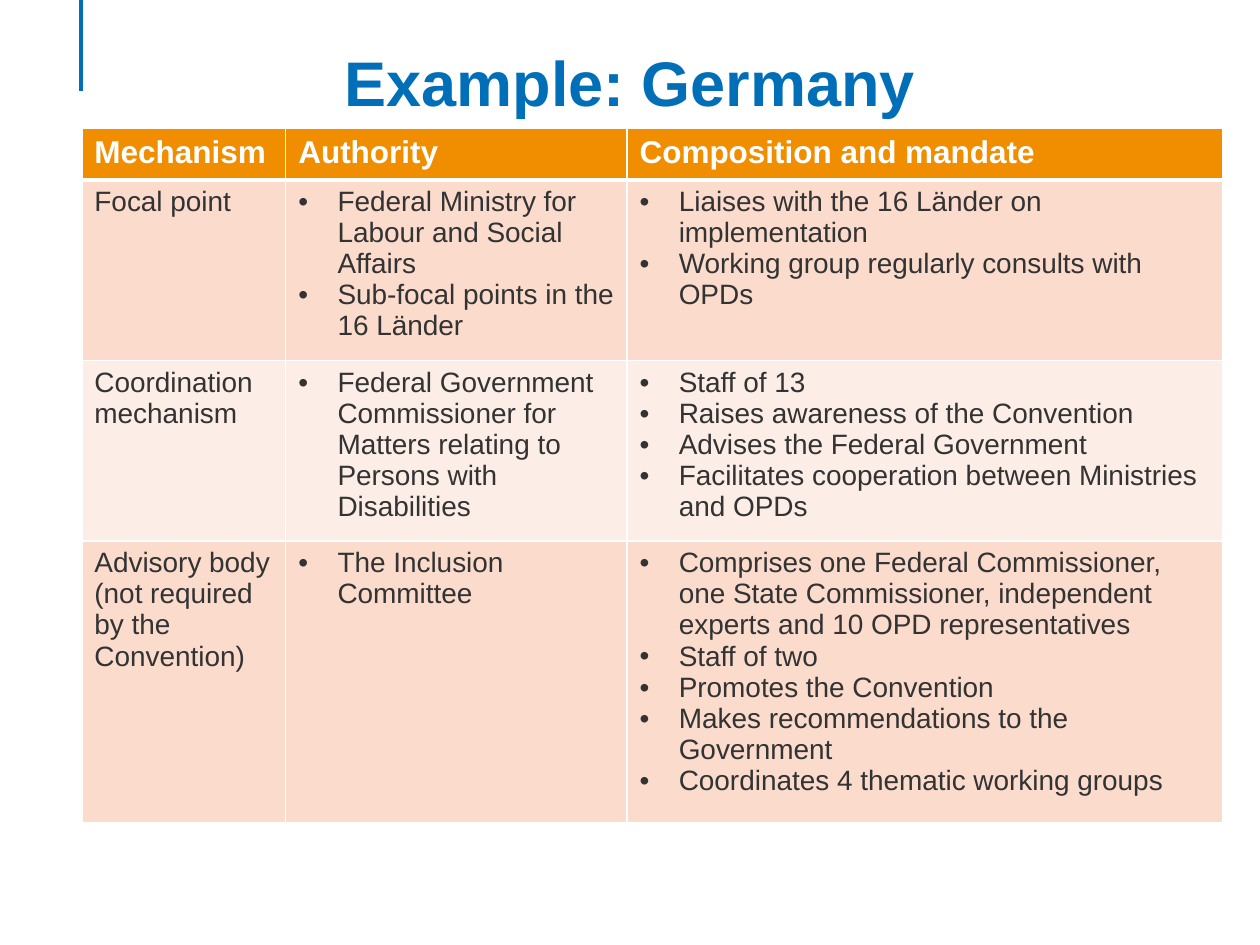
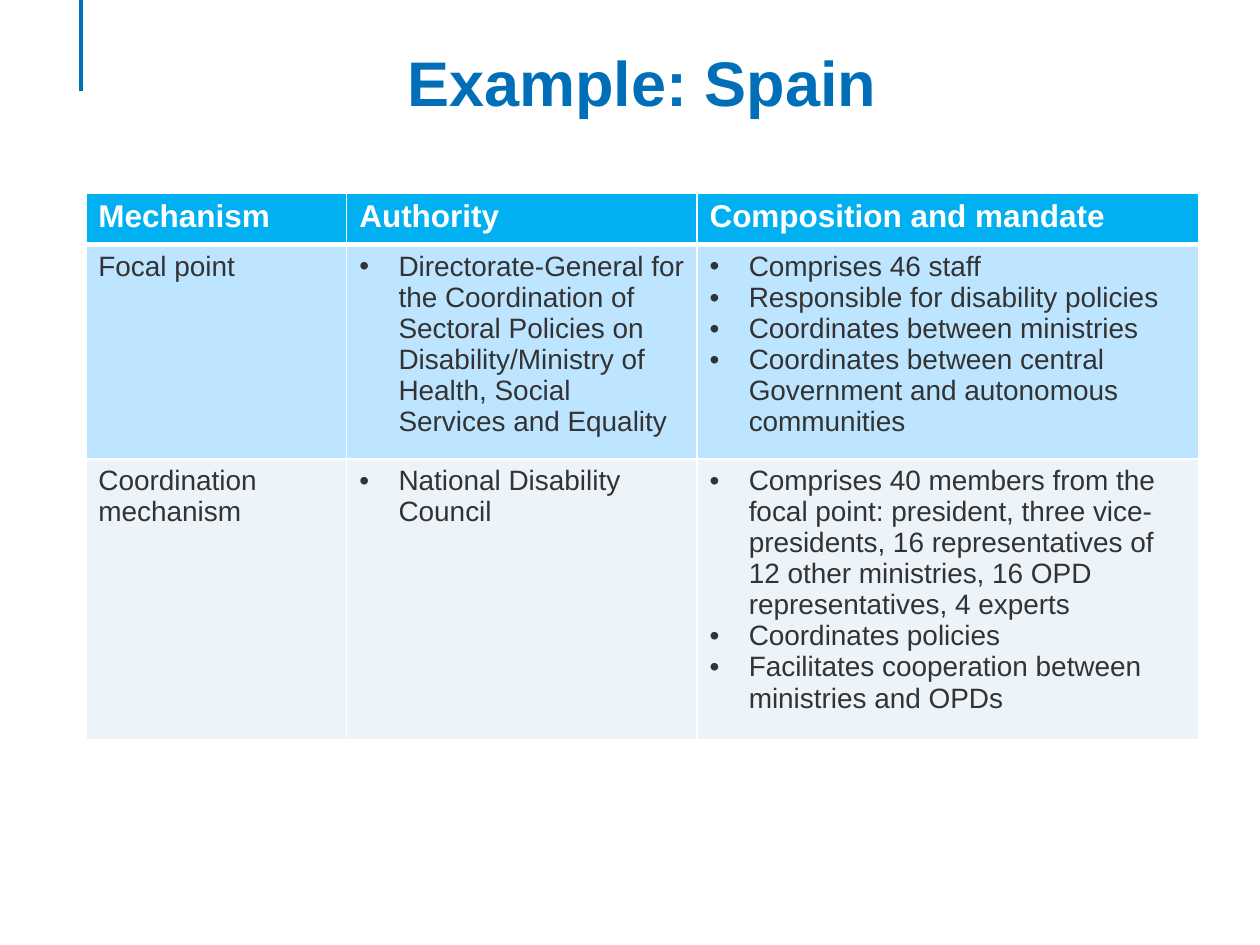
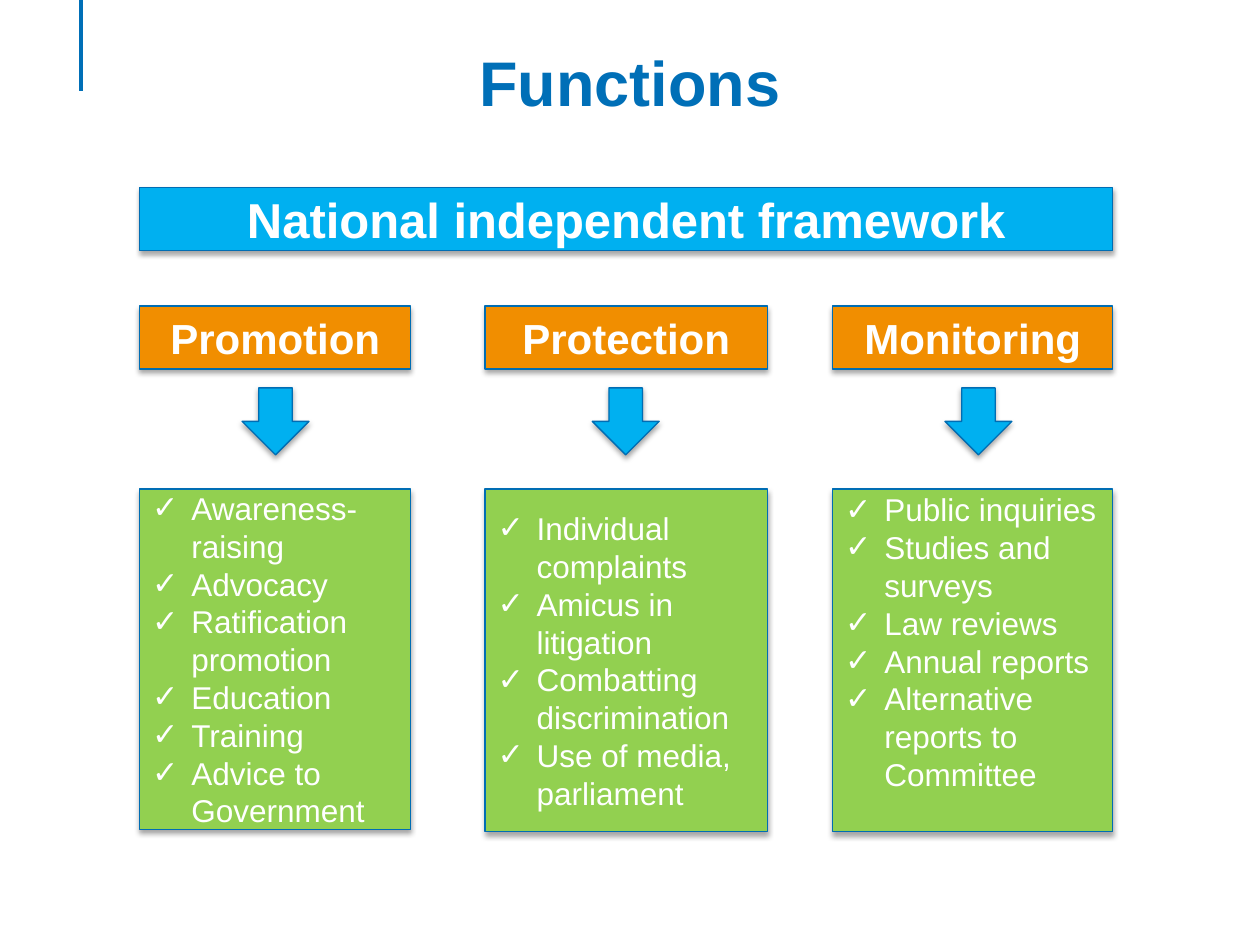
from lxml import etree
from pptx import Presentation
from pptx import util as u
from pptx.dml import color as col
from pptx.enum import shapes, text
from pptx.oxml import ns

Cm, Pt = u.Cm, u.Pt
FONT = "Arial"
BLUE, SKY, EDGE = "006FB7", "00B0F0", "006DB3"
ORANGE, GREEN, WHITE, DARK = "F18E00", "92D050", "FFFFFF", "333333"
TITLE = (1.09, 0.76, 23.22, 3.02)
LEFT, MID = text.PP_ALIGN.LEFT, text.PP_ALIGN.CENTER
HEADS = ["Mechanism", "Authority", "Composition and mandate"]

GERMANY = [
    ["Focal point",
     ["Federal Ministry for Labour and Social Affairs",
      "Sub-focal points in the 16 Länder"],
     ["Liaises with the 16 Länder on implementation",
      "Working group regularly consults with OPDs"]],
    ["Coordination mechanism",
     ["Federal Government Commissioner for Matters relating to Persons with Disabilities"],
     ["Staff of 13",
      "Raises awareness of the Convention",
      "Advises the Federal Government",
      "Facilitates cooperation between Ministries and OPDs"]],
    ["Advisory body (not required by the Convention)",
     ["The Inclusion Committee"],
     ["Comprises one Federal Commissioner, one State Commissioner, "
      "independent experts and 10 OPD representatives",
      "Staff of two",
      "Promotes the Convention",
      "Makes recommendations to the Government",
      "Coordinates 4 thematic working groups"]],
]
SPAIN = [
    ["Focal point",
     ["Directorate-General for the Coordination of Sectoral Policies on "
      "Disability/Ministry of Health, Social Services and Equality"],
     ["Comprises 46 staff",
      "Responsible for disability policies",
      "Coordinates between ministries",
      "Coordinates between central Government and autonomous communities"]],
    ["Coordination mechanism",
     ["National Disability Council"],
     ["Comprises 40 members from the focal point: president, three vice-presidents, "
      "16 representatives of 12 other ministries, 16 OPD representatives, 4 experts",
      "Coordinates policies",
      "Facilitates cooperation between ministries and OPDs"]],
]
TASKS = [
    ("Promotion", 2.82, 5.46, 6.86, 4.88, 0.13,
     ["Awareness-raising", "Advocacy", "Ratification promotion",
      "Education", "Training", "Advice to Government"]),
    ("Protection", 9.78, 5.69, 6.91, 11.94, 0.13,
     ["Individual complaints", "Amicus in litigation",
      "Combatting discrimination", "Use of media, parliament"]),
    ("Monitoring", 16.79, 5.64, 6.91, 19.05, 0.89,
     ["Public inquiries", "Studies and surveys", "Law reviews",
      "Annual reports", "Alternative reports to Committee"]),
]


def rgb(code):
    """Turn a hex string into a colour."""
    return col.RGBColor.from_string(code)


def sub(node, tag, **attrs):
    """Append a drawing element with its attributes."""
    kid = etree.SubElement(node, ns.qn(tag))
    for key, val in attrs.items():
        kid.set(key, str(val))
    return kid


def write(frame, lines, size, tint, bold=False, align=LEFT, mark=None):
    """Fill a text frame with styled paragraphs, bulleted if a mark is given."""
    frame.word_wrap = True
    frame.text = "\n".join(lines)
    for para in frame.paragraphs:
        para.alignment = align
        if mark:
            props = para._p.get_or_add_pPr()
            props.set("marL", str(Cm(0.79)))
            props.set("indent", str(-Cm(0.79)))
            sub(props, "a:buFont", typeface=FONT)
            sub(props, "a:buChar", char=mark)
        for run in para.runs:
            font = run.font
            font.name, font.size, font.bold = FONT, Pt(size), bold
            font.color.rgb = rgb(tint)


def begin(deck, title, box=TITLE):
    """Add a slide with the side rule and the title."""
    slide = deck.slides.add_slide(deck.slide_layouts[6])
    rule = slide.shapes.add_connector(
        shapes.MSO_CONNECTOR.STRAIGHT, Cm(1.63), 0, Cm(1.63), Cm(1.83))
    rule.line.color.rgb = rgb(BLUE)
    rule.line.width = Pt(2)
    sub(rule._element.spPr, "a:effectLst")
    frame = slide.shapes.add_textbox(*map(Cm, box)).text_frame
    write(frame, [title], 36, BLUE, True, MID)
    return slide


def edge(cell, top, base):
    """Draw white borders round a cell."""
    props = cell._tc.get_or_add_tcPr()
    sides = [("L", 1), ("R", 1), ("T", top), ("B", base)]
    for spot, (side, width) in enumerate(sides):
        line = sub(props, "a:ln" + side, w=Pt(width))
        sub(sub(line, "a:solidFill"), "a:srgbClr", val=WHITE)
        props.insert(spot, line)


def grid(slide, box, cols, rows, body, head, bands):
    """Add a table of mechanisms with a header and banded rows."""
    left, top = box
    size = (sum(cols), sum(rows))
    table = slide.shapes.add_table(
        len(rows), len(cols), *map(Cm, (left, top, *size))).table
    for item, width in zip(table.columns, cols):
        item.width = Cm(width)
    for item, height in zip(table.rows, rows):
        item.height = Cm(height)
    for r, line in enumerate([HEADS] + body):
        for c, words in enumerate(line):
            cell = table.cell(r, c)
            cell.fill.solid()
            cell.fill.fore_color.rgb = rgb(bands[(r - 1) % 2] if r else head)
            edge(cell, 3 if r == 1 else 1, 1 if r else 3)
            if r == 0:
                write(cell.text_frame, [words], 18, WHITE, True)
            elif c == 0:
                write(cell.text_frame, [words], 16, DARK)
            else:
                write(cell.text_frame, words, 16, DARK, mark="•")


def block(slide, kind, box, fill):
    """Add a filled shape with a thin edge and a soft shadow."""
    shape = slide.shapes.add_shape(kind, *map(Cm, box))
    shape.fill.solid()
    shape.fill.fore_color.rgb = rgb(fill)
    shape.line.color.rgb = rgb(EDGE)
    shape.line.width = Pt(0.75)
    fx = sub(shape._element.spPr, "a:effectLst")
    cast = sub(fx, "a:outerShdw", blurRad=Pt(3.1), dist=Pt(1.8),
               dir=5400000, rotWithShape=0)
    sub(sub(cast, "a:srgbClr", val="000000"), "a:alpha", val=35000)
    shape.text_frame.vertical_anchor = text.MSO_ANCHOR.MIDDLE
    return shape


def task(slide, box, name, point, base, items):
    """Add one function: its heading, arrow and checklist."""
    left, top, width, height = box
    kinds = shapes.MSO_SHAPE
    head = block(slide, kinds.RECTANGLE, (left, top, width, 1.27), ORANGE)
    write(head.text_frame, [name], 24, WHITE, True, MID)
    block(slide, kinds.DOWN_ARROW, (point, top + 1.65, 1.35, 1.35), SKY)
    area = (left, top + 3.69, width, height)
    panel = block(slide, kinds.FLOWCHART_PROCESS, area, GREEN)
    write(panel.text_frame, items, 18, WHITE, mark="✓")
    panel.text_frame.margin_bottom = Cm(base)


def main():
    """Build the three slides."""
    deck = Presentation()
    deck.slide_width, deck.slide_height = Cm(25.4), Cm(19.05)

    slide = begin(deck, "Example: Germany")
    grid(slide, (1.65, 2.59), (4.11, 6.88, 12.01), (1.04, 3.63, 3.63, 5),
         GERMANY, ORANGE, ("FADBCC", "FCEEE7"))

    slide = begin(deck, "Example: Spain", (1.09, 0.76, 23.7, 3.02))
    grid(slide, (1.73, 3.89), (5.26, 7.06, 10.11), (1.04, 4.32, 5.66),
         SPAIN, SKY, ("BEE5FF", "ECF3F9"))

    slide = begin(deck, "Functions")
    band = block(slide, shapes.MSO_SHAPE.RECTANGLE, (2.82, 3.78, 19.61, 1.27), SKY)
    write(band.text_frame, ["National independent framework"], 28, WHITE, True, MID)
    for name, left, width, height, point, base, items in TASKS:
        task(slide, (left, 6.17, width, height), name, point, base, items)

    deck.save("out.pptx")


if __name__ == "__main__":
    main()
